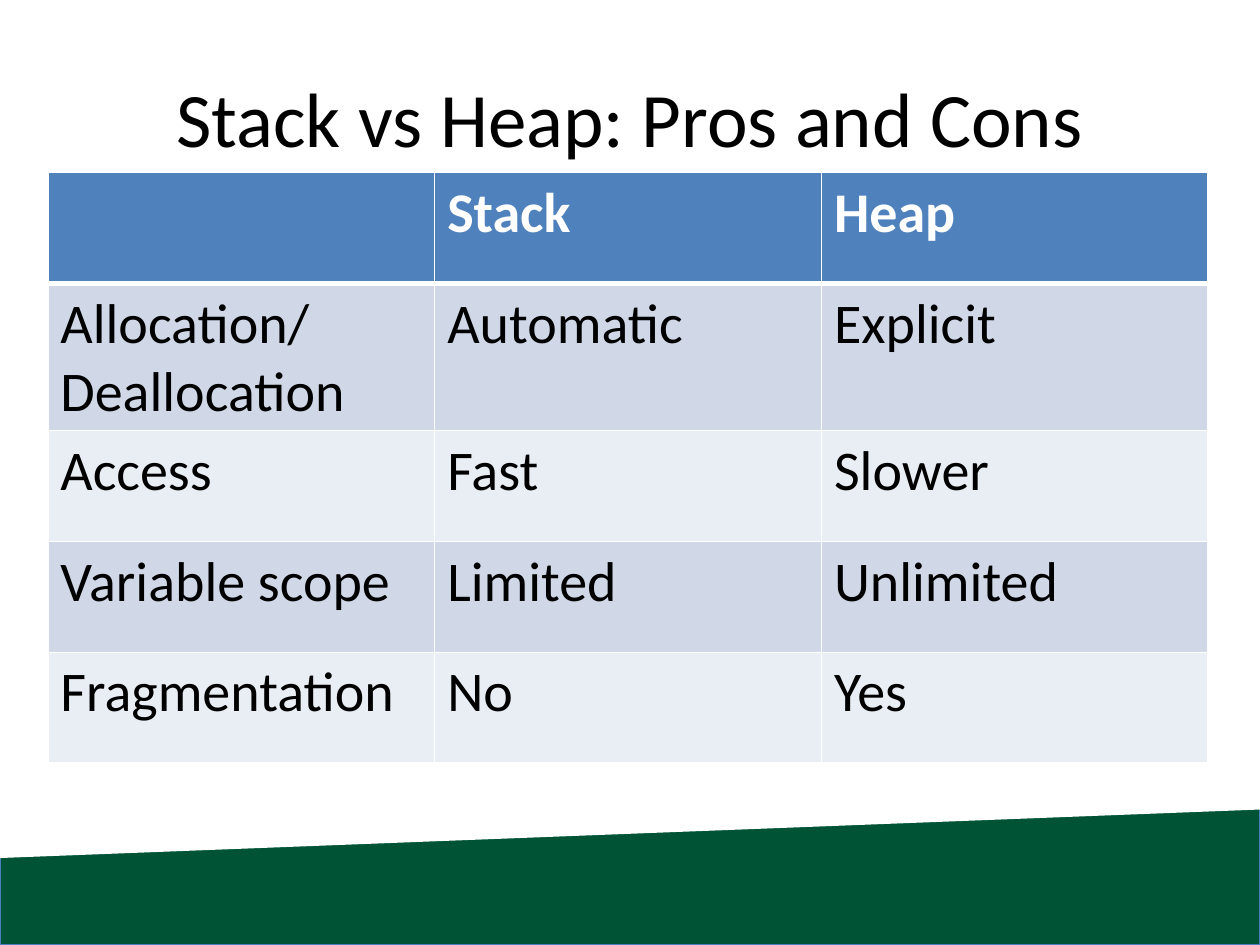
from dataclasses import dataclass

from lxml.etree import SubElement
from pptx import Presentation
from pptx.dml.color import RGBColor
from pptx.enum.shapes import MSO_SHAPE as Shape
from pptx.enum.text import MSO_ANCHOR as Anchor, PP_ALIGN as Align
from pptx.oxml.ns import qn
from pptx.util import Inches, Pt


@dataclass(frozen=True)
class Theme:
    font: str = "Calibri"
    title_size: int = 44
    cell_size: int = 32
    text: str = "000000"
    white: str = "FFFFFF"
    green: str = "005334"
    outline: str = "4B7EBC"
    header: str = "4F81BD"
    bands: tuple = ("D0D8E8", "E9EDF4")


THEME = Theme()

ROWS = [
    ("", "Stack", "Heap"),
    ("Allocation/Deallocation", "Automatic", "Explicit"),
    ("Access", "Fast", "Slower"),
    ("Variable scope", "Limited", "Unlimited"),
    ("Fragmentation", "No", "Yes"),
]


def color(value):
    return RGBColor.from_string(value)


def add_span(para, text, size, ink, bold=False):
    span = para.add_run()
    span.text = text
    span.font.name = THEME.font
    span.font.size = Pt(size)
    span.font.bold = bold
    span.font.color.rgb = color(ink)


def add_block(page, kind, left, top, width, height, fill, line=None):
    block = page.shapes.add_shape(
        kind, Inches(left), Inches(top), Inches(width), Inches(height))
    block.shadow.inherit = False
    block.fill.solid()
    block.fill.fore_color.rgb = color(fill)
    if line:
        block.line.color.rgb = color(line)
        block.line.width = Pt(0.75)
    else:
        block.line.fill.background()
    return block


def add_footer(page):
    """Green band whose top edge is slanted by a white parallelogram."""
    add_block(page, Shape.RECTANGLE, 0, 5.61, 10, 1.89, THEME.green, THEME.outline)
    slant = add_block(page, Shape.PARALLELOGRAM, 3.84, 0.65, 2.32, 10, THEME.white)
    slant.adjustments[0] = 0.166
    slant.rotation = 90
    slant.element.spPr.find(qn("a:xfrm")).set("flipH", "1")


def add_title(page, text):
    box = page.shapes.add_textbox(Inches(0.5), Inches(0.3), Inches(9), Inches(1.25))
    frame = box.text_frame
    frame.word_wrap = True
    frame.vertical_anchor = Anchor.MIDDLE
    para = frame.paragraphs[0]
    para.alignment = Align.CENTER
    add_span(para, text, THEME.title_size, THEME.text)


def set_borders(cell, **widths):
    """Draw white cell borders; widths in points are keyed by side L, R, T, B."""
    properties = cell._tc.get_or_add_tcPr()
    for side, width in widths.items():
        line = SubElement(properties, qn(f"a:ln{side}"), w=str(Pt(width)))
        fill = SubElement(line, qn("a:solidFill"))
        SubElement(fill, qn("a:srgbClr"), val=THEME.white)


def fill_cell(cell, text, row):
    is_header = row == 0
    set_borders(cell, L=1, R=1, T=3 if row == 1 else 1, B=3 if is_header else 1)
    cell.fill.solid()
    cell.fill.fore_color.rgb = color(
        THEME.header if is_header else THEME.bands[(row - 1) % 2])
    if text:
        add_span(cell.text_frame.paragraphs[0], text, THEME.cell_size,
                 THEME.white if is_header else THEME.text, is_header)


def add_comparison(page, rows):
    column_width, row_height = 3.07, 0.88
    columns = len(rows[0])
    table = page.shapes.add_table(
        len(rows), columns, Inches(0.38), Inches(1.37),
        Inches(column_width * columns), Inches(row_height * len(rows))).table
    for row, texts in enumerate(rows):
        for column, text in enumerate(texts):
            fill_cell(table.cell(row, column), text, row)


def main():
    deck = Presentation()
    deck.slide_width, deck.slide_height = Inches(10), Inches(7.5)
    page = deck.slides.add_slide(deck.slide_layouts[6])
    add_footer(page)
    add_title(page, "Stack vs Heap: Pros and Cons")
    add_comparison(page, ROWS)
    deck.save("out.pptx")


if __name__ == "__main__":
    main()
